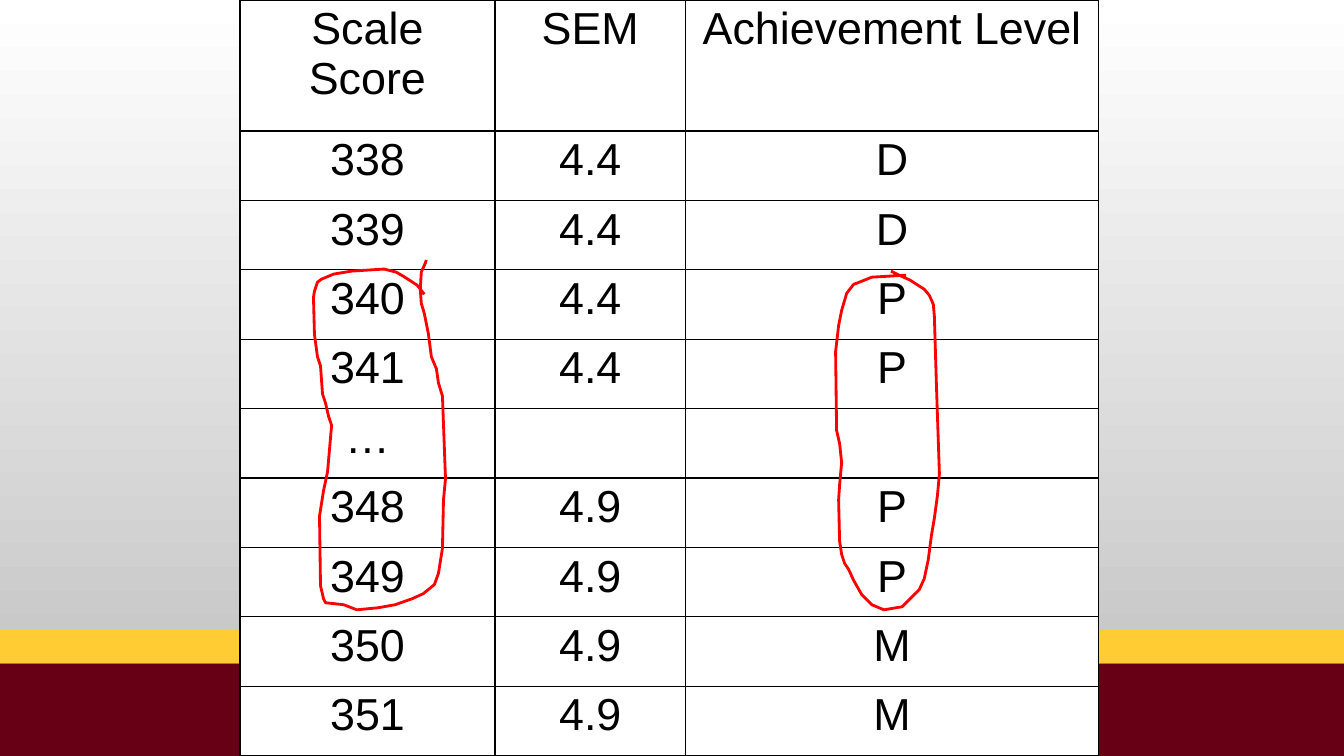
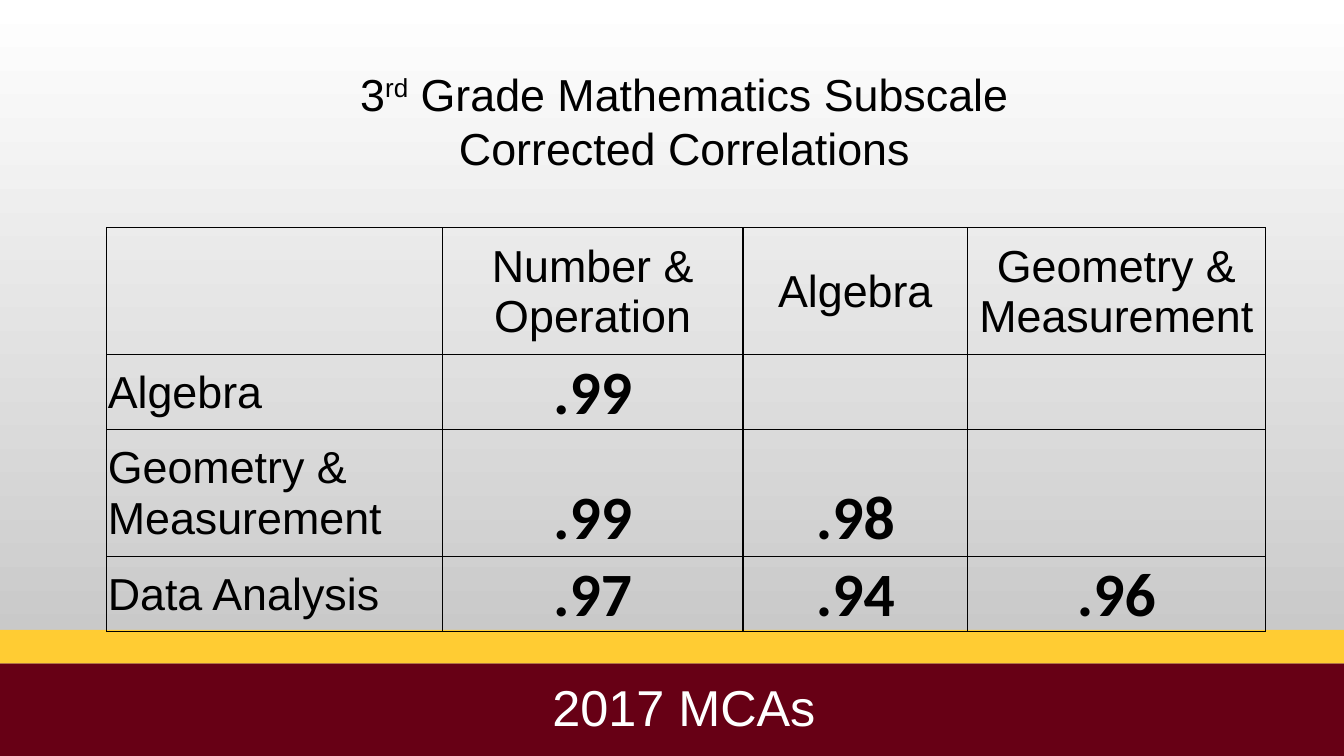
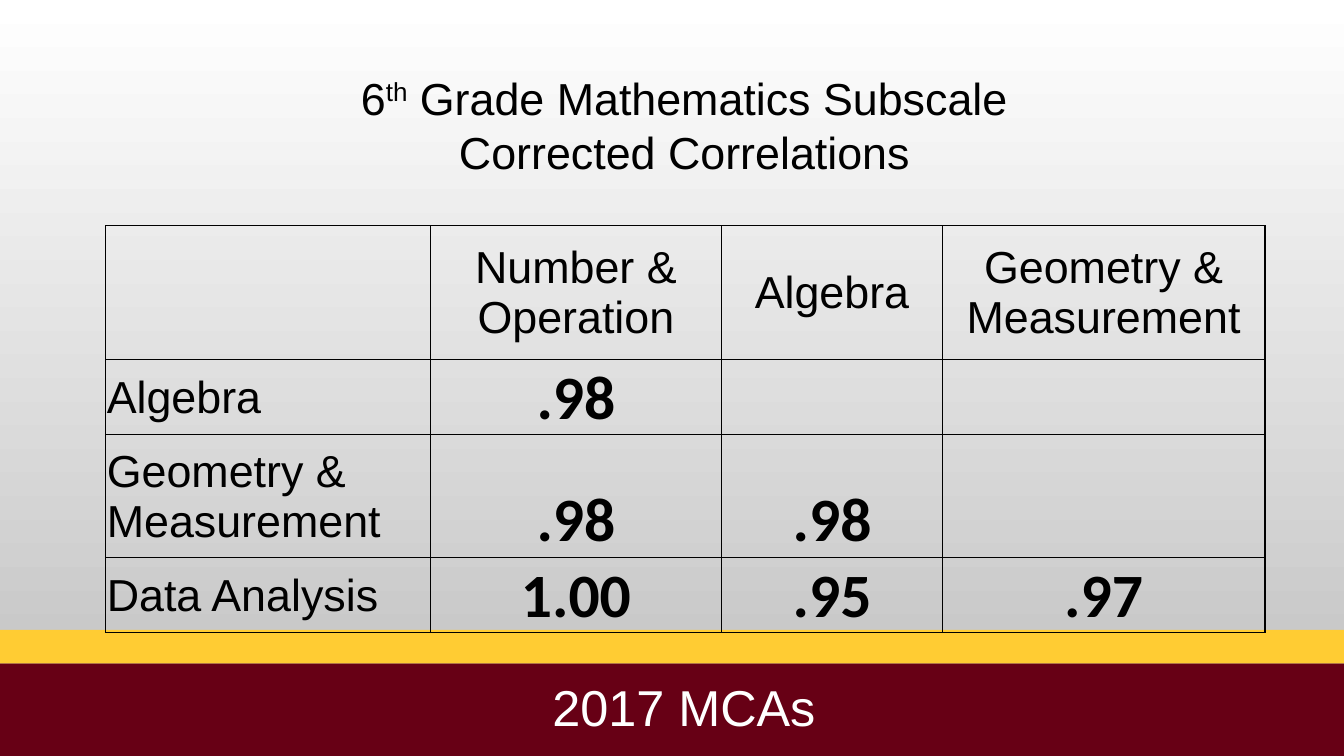
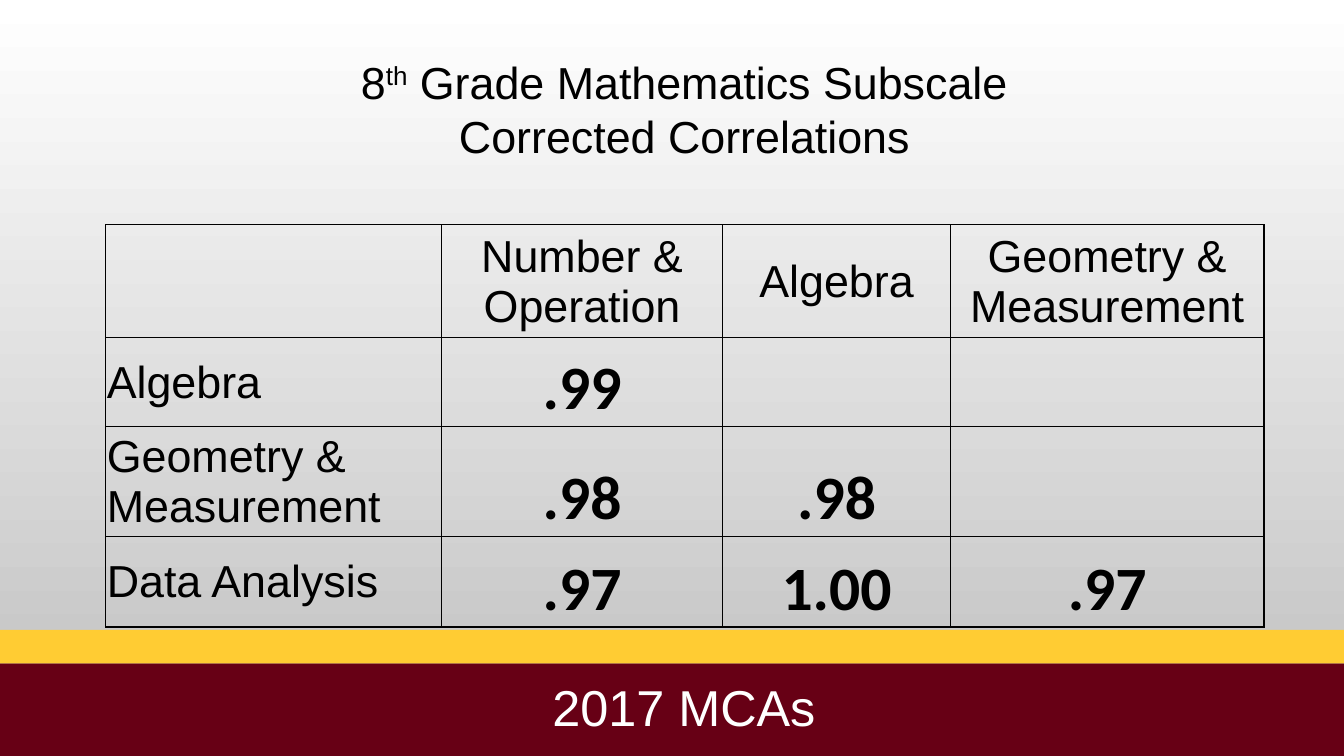
from pptx import Presentation
from pptx.dml.color import RGBColor
from pptx.enum.shapes import MSO_SHAPE as Kind
from pptx.enum.text import MSO_ANCHOR as Anchor, MSO_AUTO_SIZE as Fit, PP_ALIGN as Align
from pptx.oxml import parse_xml
from pptx.oxml.ns import nsdecls
from pptx.util import Pt

BLACK = RGBColor(0x00, 0x00, 0x00)
WHITE = RGBColor(0xFF, 0xFF, 0xFF)
GRAY = RGBColor(0xBF, 0xBF, 0xBF)
MAROON = RGBColor(0x67, 0x00, 0x15)
GOLD = RGBColor(0xFF, 0xCC, 0x33)
RED = RGBColor(0xFF, 0x00, 0x00)

SCORES = [
    ("Scale Score", "SEM", "Achievement Level"),
    ("338", "4.4", "D"),
    ("339", "4.4", "D"),
    ("340", "4.4", "P"),
    ("341", "4.4", "P"),
    ("…", "", ""),
    ("348", "4.9", "P"),
    ("349", "4.9", "P"),
    ("350", "4.9", "M"),
    ("351", "4.9", "M"),
]

LEVEL_LOOP = [
    (899, 273), (865, 275), (850, 281), (847, 282), (840, 291), (835, 308),
    (832, 323), (829, 349), (830, 427), (833, 440), (835, 459), (833, 481),
    (832, 496), (833, 537), (835, 550), (838, 559), (842, 565), (847, 576),
    (855, 590), (865, 600), (877, 605), (895, 602), (903, 594), (912, 585),
    (917, 574), (921, 555), (924, 532), (927, 514), (930, 492), (932, 470),
    (931, 440), (929, 380), (927, 314), (926, 302), (922, 293), (917, 287),
    (903, 278), (892, 273), (884, 269),
]

SCORE_LOOP = [
    (421, 292), (414, 283), (400, 274), (393, 270), (381, 267), (349, 269),
    (331, 272), (319, 277), (315, 280), (312, 289), (311, 295), (312, 332),
    (315, 354), (318, 363), (320, 391), (323, 400), (326, 413), (329, 422),
    (325, 468), (321, 487), (318, 506), (317, 512), (318, 581), (321, 594),
    (323, 598), (341, 600), (354, 605), (375, 603), (392, 600), (409, 594),
    (420, 589), (431, 580), (435, 569), (439, 544), (440, 496), (442, 475),
    (439, 393), (435, 380), (433, 366), (428, 354), (425, 331), (421, 311),
    (418, 301), (417, 287), (418, 270), (422, 261), (423, 258),
]

HEADS = ("", "Number & Operation", "Algebra", "Geometry & Measurement")

GRADES = [
    dict(num="3", end="rd", top=44, box=(76.3, 162.7),
         cols=(239.8, 214.6, 160.6, 212.4), rows=(90.7, 53.3, 90.7, 53.3),
         vals=((".99", "", ""), (".99", ".98", ""), (".97", ".94", ".96"))),
    dict(num="6", end="th", top=46.8, box=(75.6, 161.3),
         cols=(231.8, 208.1, 157.7, 230.4), rows=(95.8, 51.8, 87.8, 51.8),
         vals=((".98", "", ""), (".98", ".98", ""), ("1.00", ".95", ".97"))),
    dict(num="8", end="th", top=35.3, box=(75.6, 160.6),
         cols=(239.8, 200.9, 162.7, 223.9), rows=(80.6, 63.4, 78.5, 64.8),
         vals=((".99", "", ""), (".98", ".98", ""), (".97", "1.00", ".97"))),
]


class Deck:
    def __init__(self):
        self.prs = Presentation()
        self.prs.slide_width = Pt(960)
        self.prs.slide_height = Pt(540)
        self.slide = None
        self.wash()

    def wash(self):
        fill = self.prs.slide_master.background.fill
        fill.gradient()
        fill.gradient_angle = 270
        for stop, tone in zip(fill.gradient_stops, (WHITE, GRAY)):
            stop.color.rgb = tone

    def add(self, index):
        self.slide = self.prs.slides.add_slide(self.prs.slide_layouts[index])

    def band(self, x, y, w, h, tone):
        bar = self.slide.shapes.add_shape(Kind.RECTANGLE, Pt(x), Pt(y), Pt(w), Pt(h))
        bar.shadow.inherit = False
        bar.fill.solid()
        bar.fill.fore_color.rgb = tone
        bar.line.fill.background()
        self.prs.slide_master.shapes.element.append(bar.element)

    def style(self, para, size, tone=BLACK, face="Arial", bold=False):
        font = para.font
        font.size, font.name, font.bold = Pt(size), face, bold
        font.color.rgb = tone

    def title(self, num, end, top):
        box = self.slide.shapes.title
        box.left, box.top, box.width, box.height = Pt(221), Pt(top), Pt(536), Pt(85)
        frame = box.text_frame
        frame.vertical_anchor = Anchor.TOP
        frame.auto_size = Fit.SHAPE_TO_FIT_TEXT
        para = frame.paragraphs[0]
        para.alignment = Align.CENTER
        for text in (num, end, " Grade Mathematics Subscale Corrected Correlations"):
            run = para.add_run()
            run.text = text
            if text == end:
                run._r.get_or_add_rPr().set("baseline", "30000")
        self.style(para, 32)

    def label(self, text, x, y, w, h):
        box = self.slide.shapes.add_textbox(Pt(x), Pt(y), Pt(w), Pt(h))
        frame = box.text_frame
        frame.word_wrap = False
        frame.auto_size = Fit.SHAPE_TO_FIT_TEXT
        frame.text = text
        self.style(frame.paragraphs[0], 36, WHITE)

    def grid(self, x, y, cols, rows):
        frame = self.slide.shapes.add_table(
            len(rows), len(cols), Pt(x), Pt(y), Pt(sum(cols)), Pt(sum(rows)))
        table = frame.table
        table.first_row = table.horz_banding = False
        for col, wide in zip(table.columns, cols):
            col.width = Pt(wide)
        for row, high in zip(table.rows, rows):
            row.height = Pt(high)
        return table

    def cell(self, cell, text, pads, fill=None, anchor=Anchor.TOP,
             align=Align.CENTER, size=32, **look):
        props = cell._tc.get_or_add_tcPr()
        for side in "LRTB":
            props.append(parse_xml(
                f'<a:ln{side} {nsdecls("a")} w="{Pt(1)}"><a:solidFill>'
                f'<a:srgbClr val="{BLACK}"/></a:solidFill></a:ln{side}>'))
        if fill is None:
            cell.fill.background()
        else:
            cell.fill.solid()
            cell.fill.fore_color.rgb = fill
        if not text:
            return
        (cell.margin_left, cell.margin_top,
         cell.margin_right, cell.margin_bottom) = map(Pt, pads)
        cell.vertical_anchor = anchor
        cell.text = text
        para = cell.text_frame.paragraphs[0]
        para.alignment = align
        self.style(para, size, **look)

    def scores(self):
        table = self.grid(171.4, 0, (182.2, 136.1, 295.2), [93.6] + [49.6] * 9)
        for r, row in enumerate(SCORES):
            for c, text in enumerate(row):
                self.cell(table.cell(r, c), text, (5, 2.9, 5, 2.9), WHITE)

    def matrix(self, box, cols, rows, vals):
        table = self.grid(*box, cols, rows)
        body = [HEADS] + [(name, *row) for name, row in
                          zip(HEADS[2:] + ("Data Analysis",), vals)]
        for r, row in enumerate(body):
            for c, text in enumerate(row):
                look = dict(anchor=Anchor.MIDDLE)
                if r and c:
                    look = dict(anchor=Anchor.BOTTOM, size=44, face="Calibri", bold=True)
                elif r:
                    look["align"] = Align.LEFT
                self.cell(table.cell(r, c), text, (0.7, 0.7, 0.7, 0), **look)

    def loop(self, dots):
        pen = self.slide.shapes.build_freeform(*dots[0], scale=Pt(0.72))
        pen.add_line_segments(dots[1:], close=False)
        ink = pen.convert_to_shape()
        ink.shadow.inherit = False
        ink.fill.background()
        ink.line.color.rgb = RED
        ink.line.width = Pt(2)


def main():
    deck = Deck()
    deck.add(6)
    deck.band(0, 473.8, 960.5, 67.7, MAROON)
    deck.band(-0.7, 450, 962, 23.8, GOLD)
    deck.scores()
    deck.loop(LEVEL_LOOP)
    deck.loop(SCORE_LOOP)
    for grade in GRADES:
        deck.add(5)
        deck.title(grade["num"], grade["end"], grade["top"])
        deck.matrix(grade["box"], grade["cols"], grade["rows"], grade["vals"])
        deck.label("2017 MCAs", 387.4, 479.5, 204.5, 51)
    deck.prs.save("out.pptx")


if __name__ == "__main__":
    main()
